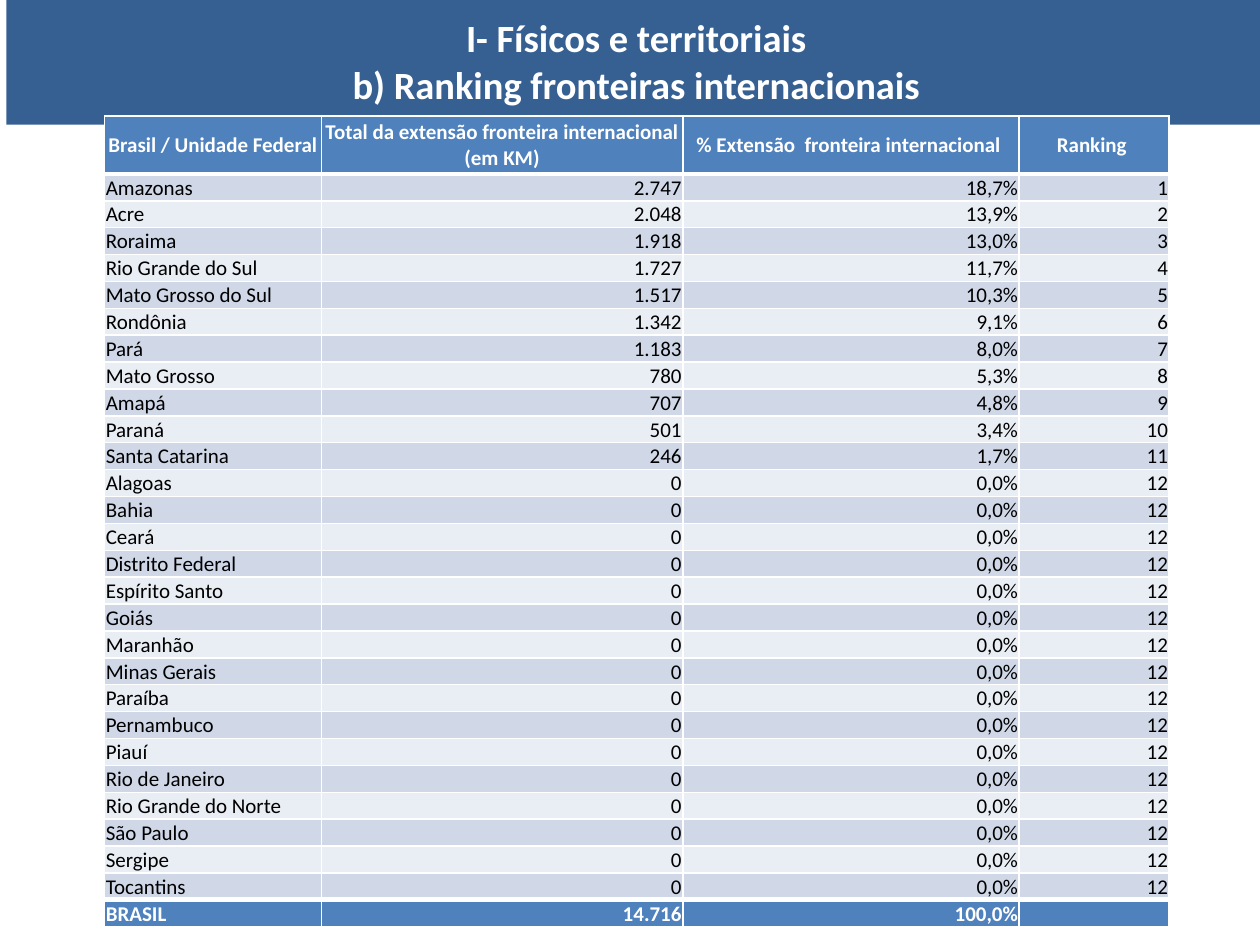
from pptx import Presentation
from pptx.dml.color import RGBColor
from pptx.enum.shapes import MSO_SHAPE
from pptx.enum.text import MSO_ANCHOR, PP_ALIGN
from pptx.oxml.xmlchemy import OxmlElement
from pptx.util import Inches, Pt

HEADINGS = [
    ["Brasil / Unidade Federal"],
    ["Total da extensão fronteira internacional", "(em KM)"],
    ["% Extensão  fronteira internacional "],
    ["Ranking "],
]
BORDER_STATES = [
    ("Amazonas", "2.747", "18,7%"),
    ("Acre", "2.048", "13,9%"),
    ("Roraima", "1.918", "13,0%"),
    ("Rio Grande do Sul", "1.727", "11,7%"),
    ("Mato Grosso do Sul", "1.517", "10,3%"),
    ("Rondônia", "1.342", "9,1%"),
    ("Pará", "1.183", "8,0%"),
    ("Mato Grosso", "780", "5,3%"),
    ("Amapá", "707", "4,8%"),
    ("Paraná", "501", "3,4%"),
    ("Santa Catarina", "246", "1,7%"),
]
INLAND_STATES = [
    "Alagoas", "Bahia", "Ceará", "Distrito Federal", "Espírito Santo", "Goiás",
    "Maranhão", "Minas Gerais", "Paraíba", "Pernambuco", "Piauí",
    "Rio de Janeiro", "Rio Grande do Norte", "São Paulo", "Sergipe", "Tocantins",
]
TOTAL = ("BRASIL", " 14.716", "100,0%", "")
COLUMN_WIDTHS = [1.72, 2.87, 2.67, 1.19]
HEADER_HEIGHT, ROW_HEIGHT = 0.46, 0.21


def color(value):
    return RGBColor.from_string(value)


def write(frame, paragraphs, size=12, ink="000000", bold=False,
          align=PP_ALIGN.LEFT, font="Calibri"):
    """Write paragraphs; a newline inside one is a line break."""
    for index, text in enumerate(paragraphs):
        para = frame.paragraphs[0] if index == 0 else frame.add_paragraph()
        para.alignment = align
        for number, line in enumerate(text.split("\n") if text else []):
            if number:
                para.add_line_break()
            span = para.add_run()
            span.text = line
            span.font.name, span.font.size, span.font.bold = font, Pt(size), bold
            span.font.color.rgb = color(ink)
        if not text:  # keeps an empty cell as low as its row
            end = OxmlElement("a:endParaRPr")
            end.set("sz", str(size * 100))
            para._p.append(end)


class SlideBuilder:
    band = "376092"
    accent = "4F81BD"
    stripes = ("D0D8E8", "E9EDF4")
    white = "FFFFFF"

    def __init__(self, slide):
        self.slide = slide

    def title(self, text, left, top, width, height):
        box = self.slide.shapes.add_shape(
            MSO_SHAPE.RECTANGLE, Inches(left), Inches(top), Inches(width), Inches(height))
        box.shadow.inherit = False
        box.fill.solid()
        box.fill.fore_color.rgb = color(self.band)
        box.line.fill.background()
        box.text_frame.word_wrap = True
        box.text_frame.vertical_anchor = MSO_ANCHOR.MIDDLE
        write(box.text_frame, [text], size=22, ink=self.white, bold=True,
              align=PP_ALIGN.CENTER)

    def table(self, rows, left, top):
        height = HEADER_HEIGHT + ROW_HEIGHT * (len(rows) - 1)
        table = self.slide.shapes.add_table(
            len(rows), len(COLUMN_WIDTHS), Inches(left), Inches(top),
            Inches(sum(COLUMN_WIDTHS)), Inches(height)).table
        for column, width in zip(table.columns, COLUMN_WIDTHS):
            column.width = Inches(width)
        last = len(rows) - 1
        for r, values in enumerate(rows):
            table.rows[r].height = Inches(ROW_HEIGHT if r else HEADER_HEIGHT)
            strong = r in (0, last)
            fill = self.accent if strong else self.stripes[(r - 1) % 2]
            above = 3 if r in (1, last) else 1
            below = 3 if r in (0, last - 1) else 1
            for c, paragraphs in enumerate(values):
                cell = table.cell(r, c)
                self.cell_style(cell, fill, above, below)
                cell.vertical_anchor = MSO_ANCHOR.MIDDLE if strong else MSO_ANCHOR.BOTTOM
                align = PP_ALIGN.RIGHT if c else PP_ALIGN.LEFT
                write(cell.text_frame, paragraphs, bold=strong,
                      ink=self.white if strong else "000000",
                      align=align if r else PP_ALIGN.CENTER)

    def cell_style(self, cell, fill, above, below):
        cell.margin_left = cell.margin_right = cell.margin_top = Inches(0.01)
        cell.margin_bottom = 0
        properties = cell._tc.get_or_add_tcPr()
        for side, weight in (("L", 1), ("R", 1), ("T", above), ("B", below)):
            line = OxmlElement(f"a:ln{side}")
            line.set("w", str(Pt(weight)))
            solid = OxmlElement("a:solidFill")
            tint = OxmlElement("a:srgbClr")
            tint.set("val", self.white)
            solid.append(tint)
            line.append(solid)
            properties.append(line)
        cell.fill.solid()
        cell.fill.fore_color.rgb = color(fill)


def main():
    deck = Presentation()
    deck.slide_width, deck.slide_height = Inches(10), Inches(7.5)
    page = SlideBuilder(deck.slides.add_slide(deck.slide_layouts[6]))

    # Title band
    page.title("I- Físicos e territoriais\nb) Ranking fronteiras internacionais",
               0.05, -0.03, 10, 1.02)

    # Ranking table: states without a border share the next rank
    states = [(*state, str(rank)) for rank, state in enumerate(BORDER_STATES, 1)]
    shared_rank = str(len(BORDER_STATES) + 1)
    states += [(name, "0", "0,0%", shared_rank) for name in INLAND_STATES]
    body = [[[value] for value in row] for row in [*states, TOTAL]]
    page.table([HEADINGS, *body], 0.83, 0.92)

    deck.save("out.pptx")


if __name__ == "__main__":
    main()
